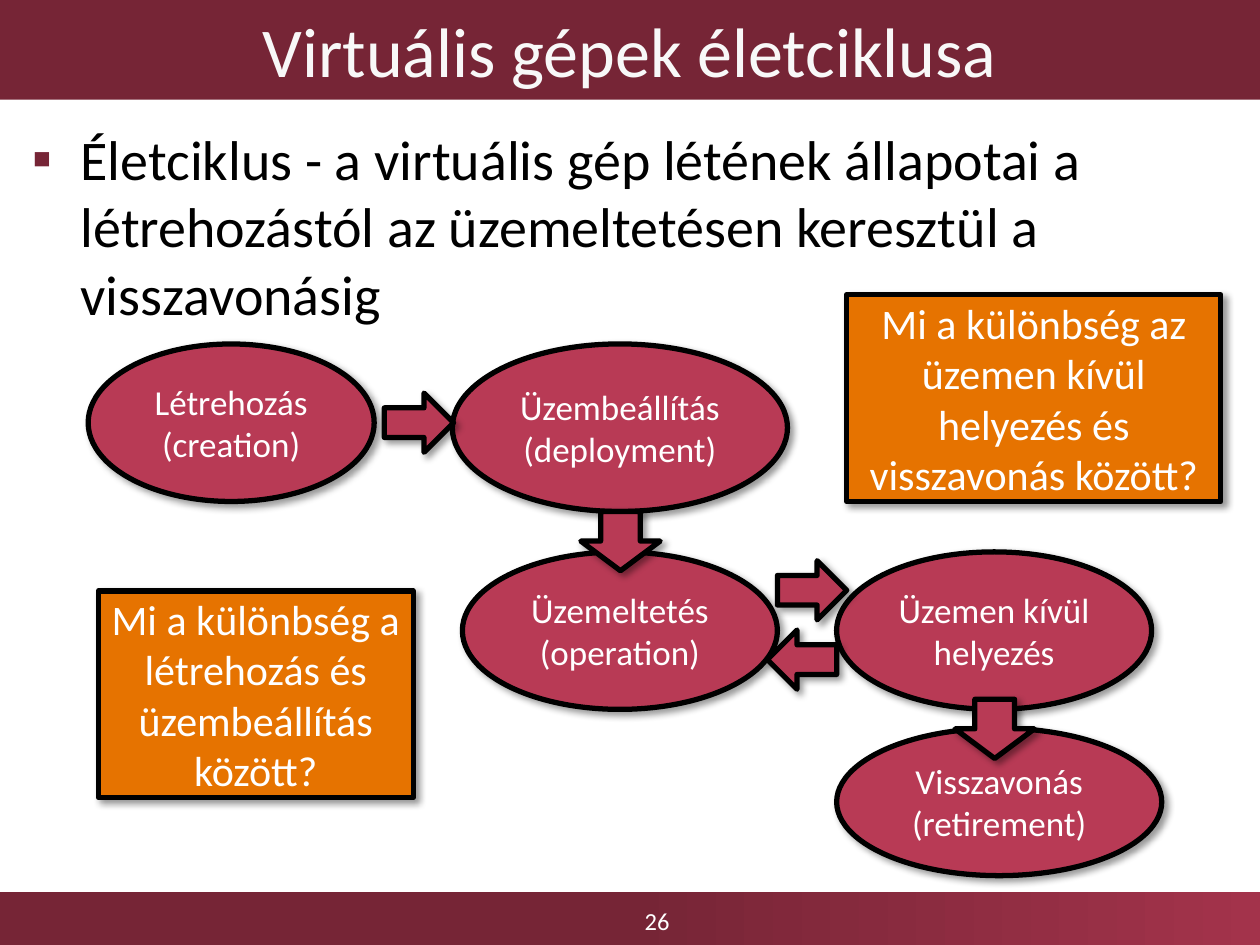
from lxml import etree
from pptx import Presentation
from pptx.dml.color import RGBColor
from pptx.enum import shapes, text
from pptx.oxml import ns
from pptx.util import Inches, Pt

COLORS = {
    "band": "762536",
    "band_end": "A3334B",
    "title": "F8F8F8",
    "state": "B83A55",
    "question": "E67300",
    "white": "FFFFFF",
    "black": "000000",
}
KIND = shapes.MSO_SHAPE


def write(shape, words, size, color, align=text.PP_ALIGN.CENTER):
    frame = shape.text_frame
    frame.word_wrap = True
    frame.auto_size = text.MSO_AUTO_SIZE.NONE
    frame.text = words
    for para in frame.paragraphs:
        para.alignment = align
        para.font.name = "Calibri"
        para.font.size = Pt(size)
        para.font.color.rgb = RGBColor.from_string(COLORS[color])


def add_outlined(kind, place, fill):
    """Add a filled shape with a thick black outline and a soft shadow."""
    shape = page.shapes.add_shape(kind, *map(Inches, place))
    shape.fill.solid()
    shape.fill.fore_color.rgb = RGBColor.from_string(COLORS[fill])
    shape.line.color.rgb = RGBColor.from_string(COLORS["black"])
    shape.line.width = Pt(3)
    shape.shadow.inherit = False
    effects = shape._element.spPr.find(ns.qn("a:effectLst"))
    shadow = etree.SubElement(
        effects, ns.qn("a:outerShdw"), blurRad=str(Pt(4)), dist=str(Pt(3)),
        dir="2700000", algn="tl", rotWithShape="0")
    tint = etree.SubElement(shadow, ns.qn("a:srgbClr"), val=COLORS["black"])
    etree.SubElement(tint, ns.qn("a:alpha"), val="40000")
    return shape


deck = Presentation()
deck.slide_width, deck.slide_height = Inches(10), Inches(7.5)
page = deck.slides.add_slide(deck.slide_layouts[1])

# Title band
title = page.shapes.title
title.left, title.top, title.width, title.height = map(Inches, (0, 0, 10, 0.79))
title.fill.solid()
title.fill.fore_color.rgb = RGBColor.from_string(COLORS["band"])
write(title, "Virtuális gépek életciklusa", 40, "title")
title.text_frame.vertical_anchor = text.MSO_ANCHOR.MIDDLE

# Definition
body = page.placeholders[1]
body.left, body.top, body.width, body.height = map(Inches, (0.16, 0.94, 9.69, 6.05))
write(body, "Életciklus - a virtuális gép létének állapotai a létrehozástól "
      "az üzemeltetésen keresztül a visszavonásig", 32, "black", text.PP_ALIGN.LEFT)
para = body.text_frame.paragraphs[0]
para.space_before = Pt(0)
props = para._p.get_or_add_pPr()
props.set("marL", str(Inches(0.38)))
props.set("indent", str(-Inches(0.38)))
bullet_color = etree.Element(ns.qn("a:buClr"))
etree.SubElement(bullet_color, ns.qn("a:srgbClr"), val=COLORS["band"])
bullet_font = etree.Element(ns.qn("a:buFont"), typeface="Calibri")
bullet = etree.Element(ns.qn("a:buChar"), char="▪")
spacing = props.find(ns.qn("a:spcBef"))
for element in (bullet, bullet_font, bullet_color):
    spacing.addnext(element)

# Footer band and page number
footer = page.shapes.add_shape(KIND.RECTANGLE, *map(Inches, (0, 7.08, 10, 0.42)))
footer.shadow.inherit = False
footer.line.fill.background()
footer.fill.gradient()
footer.fill.gradient_angle = 0
for stop, position, color in zip(footer.fill.gradient_stops, (0.5, 1), ("band", "band_end")):
    stop.position = position
    stop.color.rgb = RGBColor.from_string(COLORS[color])
number = page.shapes.add_textbox(*map(Inches, (3.59, 7.11, 3.25, 0.39)))
write(number, "26", 14, "white")
number.text_frame.vertical_anchor = text.MSO_ANCHOR.MIDDLE

# Life cycle states
states = [
    ("Létrehozás\n(creation)", (0.7, 2.73, 2.27, 1.25)),
    ("Üzembeállítás\n(deployment)", (3.59, 2.73, 2.66, 1.33)),
    ("Üzemeltetés\n(operation)", (3.67, 4.38, 2.5, 1.25)),
    ("Üzemen kívül helyezés", (6.64, 4.38, 2.5, 1.25)),
    ("Visszavonás\n(retirement)", (6.64, 5.78, 2.58, 1.17)),
]
for words, place in states:
    write(add_outlined(KIND.OVAL, place, "state"), words, 20, "white")

# Transitions
transitions = [
    (KIND.RIGHT_ARROW, 3.05, 3.12, 0.55, 0),
    (KIND.DOWN_ARROW, 4.61, 4.06, 0.63, 0),
    (KIND.RIGHT_ARROW, 6.17, 4.45, 0.55, 0),
    (KIND.RIGHT_ARROW, 6.09, 5, 0.55, 180),
    (KIND.DOWN_ARROW, 7.58, 5.55, 0.63, 0),
]
for kind, left, top, width, turn in transitions:
    arrow = add_outlined(kind, (left, top, width, 0.47), "state")
    arrow.rotation = turn

# Questions
questions = [
    ("Mi a különbség a létrehozás és üzembeállítás között?", (0.78, 4.69, 2.5, 1.64)),
    ("Mi a különbség az üzemen kívül helyezés és visszavonás között?",
     (6.72, 2.34, 2.97, 1.64)),
]
for words, place in questions:
    write(add_outlined(KIND.RECTANGLE, place, "question"), words, 24, "white")

deck.save("out.pptx")
